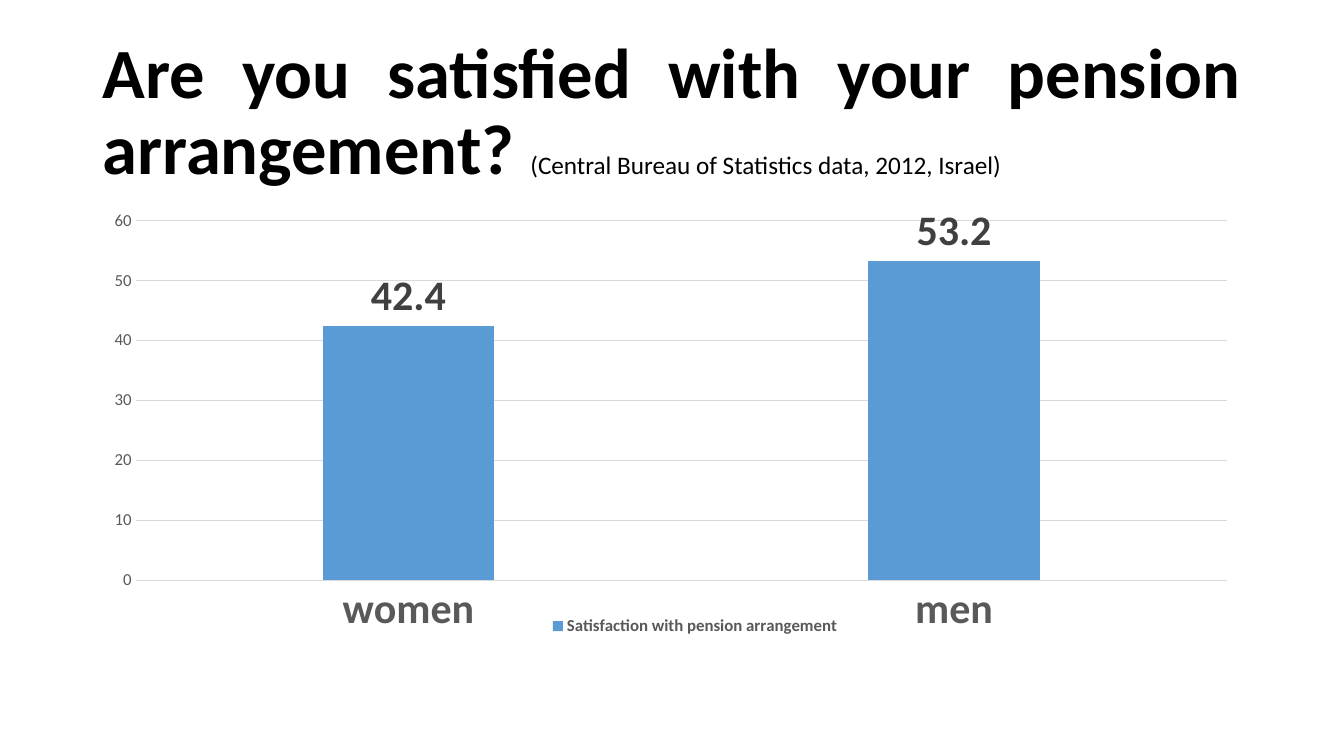
from lxml import etree
from pptx import Presentation
from pptx import util as u
from pptx.chart.data import CategoryChartData
from pptx.dml.color import RGBColor
from pptx.enum import chart as ch, text
from pptx.oxml.ns import qn

BLACK = RGBColor(0x00, 0x00, 0x00)
LABEL_GREY = RGBColor(0x40, 0x40, 0x40)
AXIS_GREY = RGBColor(0x59, 0x59, 0x59)
LINE_GREY = RGBColor(0xD9, 0xD9, 0xD9)
BAR_BLUE = RGBColor(0x5B, 0x9B, 0xD5)

QUESTION = [
    ("Are you satisfied with your pension arrangement? ", 50.4, True),
    ("(Central Bureau of Statistics data, 2012, Israel)", 18, False),
]
MEASURE = "Satisfaction with pension arrangement"
SATISFIED = {"women": 42.4, "men": 53.2}

WIDTH, HEIGHT = u.Inches(13.33), u.Inches(7.5)
MARGIN = u.Inches(0.92)
CONTENT_WIDTH = WIDTH - 2 * MARGIN
PLOT_AREA = {"x": 0.037, "y": 0.039, "w": 0.942, "h": 0.75}
LEGEND_AREA = {"x": 0.39, "y": 0.855, "w": 0.26, "h": 0.06}


def style_font(font, size, color, bold=False):
    values = {"name": "Calibri", "size": u.Pt(size), "bold": bold}
    for key, value in values.items():
        setattr(font, key, value)
    font.color.rgb = color


def style_line(line):
    line.color.rgb = LINE_GREY
    line.width = u.Pt(0.75)


def place(element, area, before, inner=False):
    for old in element.findall(qn("c:layout")):
        element.remove(old)
    layout = etree.Element(qn("c:layout"))
    manual = etree.SubElement(layout, qn("c:manualLayout"))
    settings = {"layoutTarget": "inner"} if inner else {}
    settings.update(xMode="edge", yMode="edge", **area)
    for key, value in settings.items():
        etree.SubElement(manual, qn(f"c:{key}")).set("val", str(value))
    element.insert(before, layout)


def add_question(slide):
    box = slide.shapes.add_textbox(MARGIN, u.Inches(0.4), CONTENT_WIDTH, u.Inches(1.45))
    frame = box.text_frame
    frame.word_wrap = True
    frame.vertical_anchor = text.MSO_ANCHOR.MIDDLE
    line = frame.paragraphs[0]
    line.alignment = text.PP_ALIGN.JUSTIFY
    line.line_spacing = 0.9
    for words, size, bold in QUESTION:
        run = line.add_run()
        run.text = words
        style_font(run.font, size, BLACK, bold)


def add_satisfaction(slide):
    data = CategoryChartData()
    data.categories = list(SATISFIED)
    data.add_series(MEASURE, list(SATISFIED.values()))
    chart = slide.shapes.add_chart(
        ch.XL_CHART_TYPE.COLUMN_CLUSTERED, MARGIN, u.Inches(2),
        CONTENT_WIDTH, u.Inches(4.76), data).chart
    style_font(chart.font, 10, BLACK)
    chart.has_title = False

    plot = chart.plots[0]
    for key, value in {"gap_width": 219, "overlap": -27, "vary_by_categories": False}.items():
        setattr(plot, key, value)
    bars = plot.series[0]
    bars.format.fill.solid()
    bars.format.fill.fore_color.rgb = BAR_BLUE
    labels = bars.data_labels
    labels.show_value = True
    labels.position = ch.XL_LABEL_POSITION.OUTSIDE_END
    style_font(labels.font, 30, LABEL_GREY, True)

    people, percent = chart.category_axis, chart.value_axis
    for axis, size, bold in ((people, 30, True), (percent, 12, False)):
        axis.major_tick_mark = axis.minor_tick_mark = ch.XL_TICK_MARK.NONE
        style_font(axis.tick_labels.font, size, AXIS_GREY, bold)
    style_line(people.format.line)
    percent.format.line.fill.background()
    style_line(percent.major_gridlines.format.line)
    for key, value in {"minimum_scale": 0, "maximum_scale": 60, "major_unit": 10}.items():
        setattr(percent, key, value)

    chart.has_legend = True
    legend = chart.legend
    legend.position = ch.XL_LEGEND_POSITION.BOTTOM
    legend.include_in_layout = False
    style_font(legend.font, 12, AXIS_GREY, True)

    root = chart.element
    place(root.find(".//" + qn("c:plotArea")), PLOT_AREA, 0, inner=True)
    place(root.find(".//" + qn("c:legend")), LEGEND_AREA, 1)


def main():
    deck = Presentation()
    deck.slide_width, deck.slide_height = WIDTH, HEIGHT
    slide = deck.slides.add_slide(deck.slide_layouts[6])
    add_question(slide)
    add_satisfaction(slide)
    deck.save("out.pptx")


if __name__ == "__main__":
    main()
